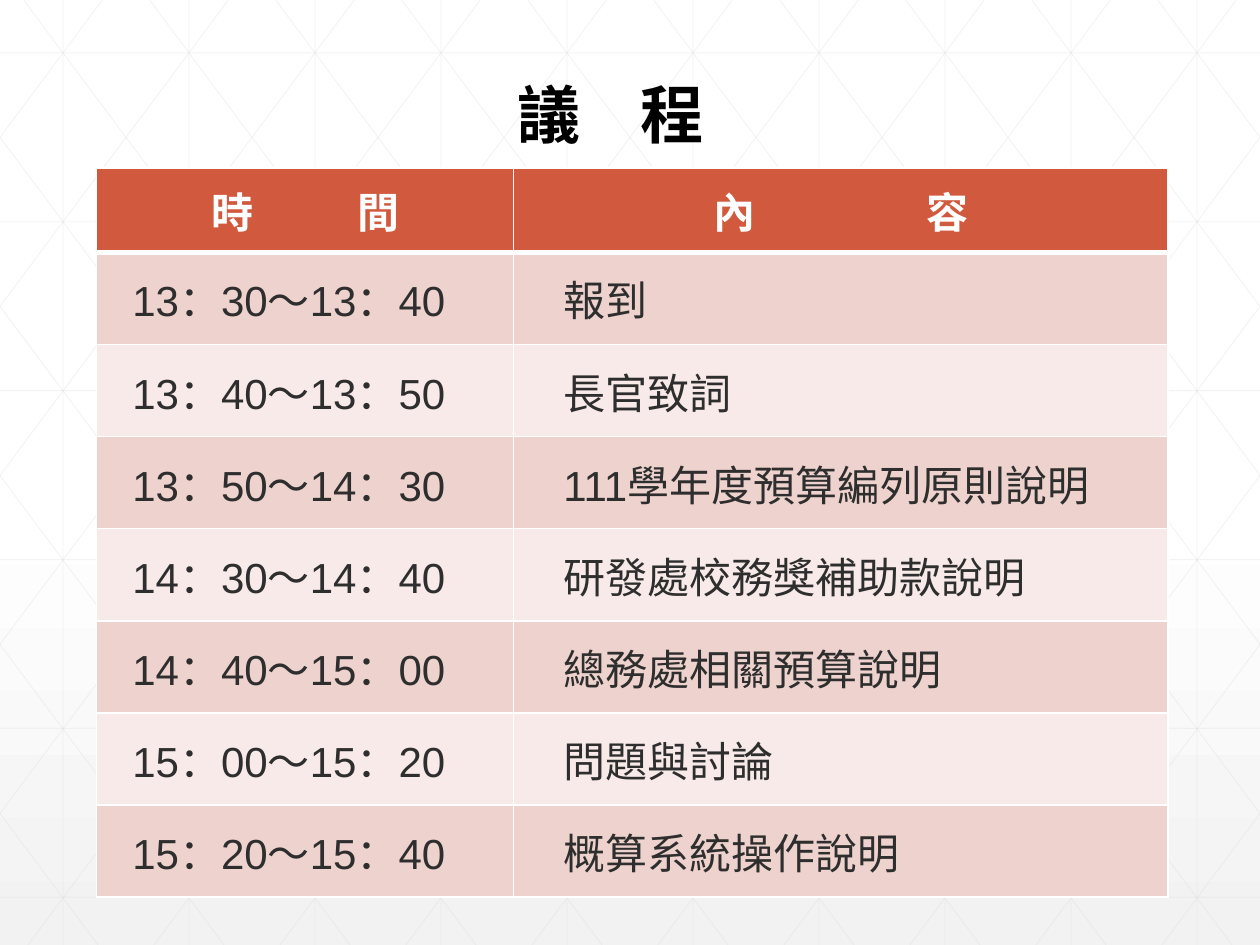
"""Build the agenda slide: a lattice background, a title and a timetable."""
from typing import NamedTuple

from pptx import Presentation
from pptx.dml.color import RGBColor
from pptx.enum.shapes import MSO_CONNECTOR
from pptx.enum.text import MSO_ANCHOR as ANCHOR, MSO_AUTO_SIZE as AUTO, PP_ALIGN as ALIGN
from pptx.oxml.ns import qn
from pptx.util import Pt
from lxml.etree import SubElement

COLORS = {
    "white": "FFFFFF", "page_end": "F2F2F2", "grid": "D9D9D9", "title": "000000",
    "header": "D15A3E", "odd": "EED2CE", "even": "F7EAE8", "text": "2D2E2D",
}
LATIN, CJK = "Arial", "Noto Sans CJK SC"
W, H = 720, 540
DIAGONAL_RUN = 402.5


class Line(NamedTuple):
    x1: float
    y1: float
    x2: float
    y2: float


class Heading(NamedTuple):
    first: str
    last: str
    spacing: float


class Item(NamedTuple):
    time: str
    topic: str


HEADINGS = [Heading("時 ", "間", 27), Heading("內 ", "容", 46)]
ITEMS = [
    Item("13：30〜13：40", "報到"),
    Item("13：40〜13：50", "長官致詞"),
    Item("13：50〜14：30", "111學年度預算編列原則說明"),
    Item("14：30〜14：40", "研發處校務獎補助款說明"),
    Item("14：40〜15：00", "總務處相關預算說明"),
    Item("15：00〜15：20", "問題與討論"),
    Item("15：20〜15：40", "概算系統操作說明"),
]


def rgb(name: str) -> RGBColor:
    return RGBColor.from_string(COLORS[name])


def paint_background(s) -> None:
    fill = s.background.fill
    fill.gradient()
    fill.gradient_angle = 270
    for stop, pos, color in zip(fill.gradient_stops, (0.53, 1), ("white", "page_end")):
        stop.position = pos
        stop.color.rgb = rgb(color)


def lattice() -> list[Line]:
    lines = [Line(x, 0, x, H) for x in range(36, W, 72)]
    lines += [Line(0, 30.25 + 96.5 * i, W, 30.25 + 96.5 * i) for i in range(6)]
    slope = H / DIAGONAL_RUN
    for i in range(-5, 10):
        top = 13.5 + 72 * i
        x1, x2 = max(top, 0), min(top + DIAGONAL_RUN, W)
        y1, y2 = (x1 - top) * slope, (x2 - top) * slope
        lines += [Line(x1, y1, x2, y2), Line(W - x1, y1, W - x2, y2)]
    return lines


def draw_line(s, line: Line) -> None:
    sp = s.shapes.add_connector(MSO_CONNECTOR.STRAIGHT, *(Pt(v) for v in line))
    sp.line.width = Pt(0.5)
    sp.line.color.rgb = rgb("grid")
    color = sp.line._ln.find(".//" + qn("a:srgbClr"))
    SubElement(color, qn("a:alpha"), val="30000")
    SubElement(sp._element.spPr, qn("a:effectLst"))


def add_run(p, text: str, size: float, color: str, bold: bool = False,
            latin: str = LATIN, spacing: float = 0) -> None:
    r = p.add_run()
    r.text = text
    r.font.size, r.font.bold, r.font.name = Pt(size), bold, latin
    r.font.color.rgb = rgb(color)
    rpr = r.font._element
    SubElement(rpr, qn("a:ea"), typeface=CJK)
    if spacing:
        rpr.set("spc", str(int(spacing * 100)))


def add_title(s) -> None:
    sp = s.shapes.title
    s.shapes._spTree.append(sp._element)
    sp.left, sp.top, sp.width, sp.height = Pt(13.5), Pt(43), Pt(670.5), Pt(47.5)
    tf = sp.text_frame
    tf.auto_size, tf.word_wrap = AUTO.NONE, True
    tf.vertical_anchor = ANCHOR.MIDDLE
    tf.margin_left = tf.margin_right = 0
    tf.margin_top = tf.margin_bottom = Pt(3.6)
    p = tf.paragraphs[0]
    p.alignment, p.line_spacing = ALIGN.CENTER, 0.95
    add_run(p, "議　", 36, "title", True, CJK, -1.75)
    add_run(p, "程", 36, "title", True, CJK)


def style_cell(cell, color: str, bottom: float = 1):
    cell.vertical_anchor = ANCHOR.MIDDLE
    cell.margin_left = cell.margin_right = Pt(1.5)
    cell.margin_top = cell.margin_bottom = 0
    tcpr = cell._tc.get_or_add_tcPr()
    for side, width in (("L", 1), ("R", 1), ("T", 1), ("B", bottom)):
        ln = SubElement(tcpr, qn(f"a:ln{side}"), w=str(Pt(width)))
        SubElement(SubElement(ln, qn("a:solidFill")), qn("a:srgbClr"), val=COLORS["white"])
    cell.fill.solid()
    cell.fill.fore_color.rgb = rgb(color)
    return cell.text_frame.paragraphs[0]


def add_agenda(s) -> None:
    frame = s.shapes.add_table(len(ITEMS) + 1, 2, Pt(55.2), Pt(96), Pt(612.4), Pt(416.6))
    table = frame.table
    table.columns[0].width, table.columns[1].width = Pt(238.3), Pt(374.1)
    for i, row in enumerate(table.rows):
        row.height = Pt(52.6 if i else 48.4)
    for cell, heading in zip(table.rows[0].cells, HEADINGS):
        p = style_cell(cell, "header", 3)
        p.alignment = ALIGN.CENTER
        add_run(p, heading.first, 24, "white", True, spacing=heading.spacing)
        add_run(p, heading.last, 24, "white", True)
    for i, item in enumerate(ITEMS, 1):
        for j, text in enumerate(item):
            cell = table.cell(i, j)
            p = style_cell(cell, "odd" if i % 2 else "even")
            if j:
                p._p.get_or_add_pPr().set("marL", str(Pt(27)))
                p.level = 1
            else:
                p.alignment = ALIGN.CENTER
                cell.margin_right = Pt(20)
            add_run(p, text, 24, "text")


def main() -> None:
    prs = Presentation()
    prs.slide_width, prs.slide_height = Pt(W), Pt(H)
    s = prs.slides.add_slide(prs.slide_layouts[5])
    paint_background(s)
    for line in lattice():
        draw_line(s, line)
    add_title(s)
    add_agenda(s)
    prs.save("out.pptx")


if __name__ == "__main__":
    main()
